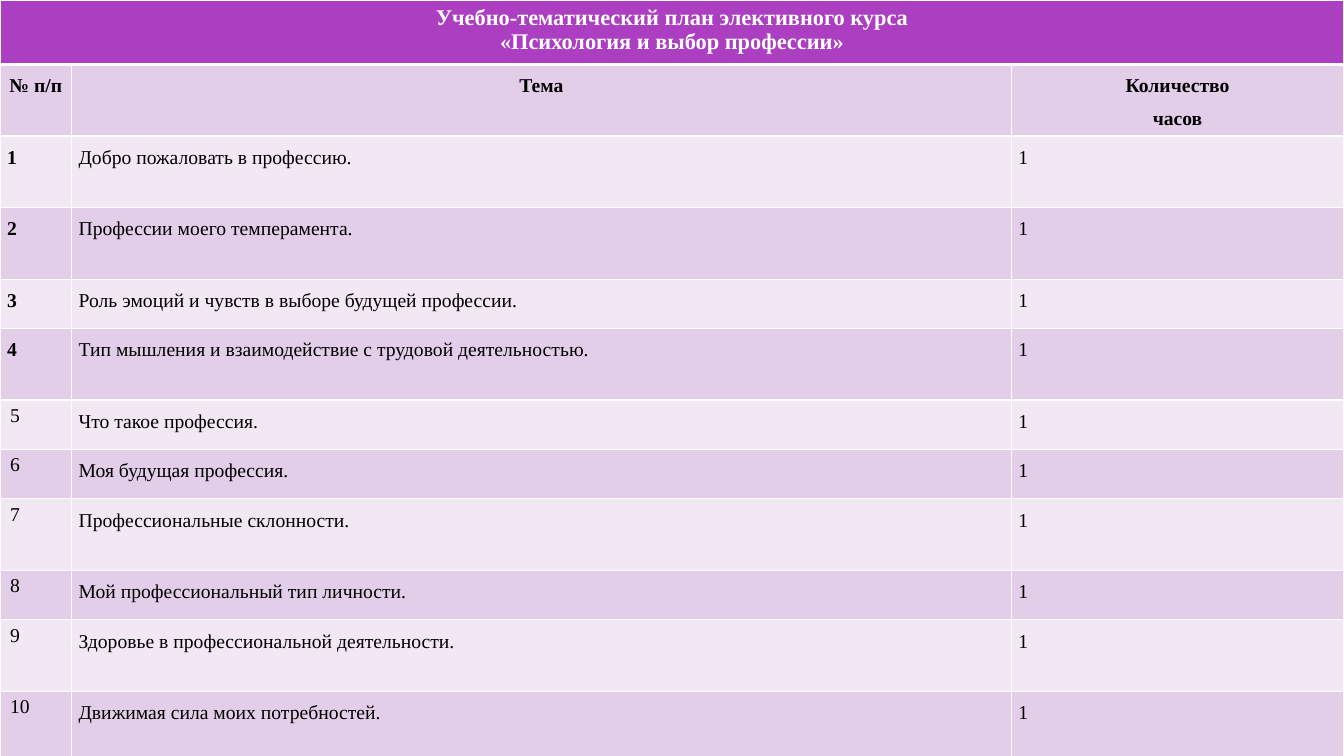
import pptx
import pptx.util
import pptx.dml.color
import pptx.enum.text
import pptx.oxml.ns
import lxml.etree

Inches, Pt = pptx.util.Inches, pptx.util.Pt
RGB = pptx.dml.color.RGBColor.from_string
ALIGN = pptx.enum.text.PP_ALIGN

COLORS = {"title": "AC3EC1", "dark": "E3CEE9", "light": "F1E8F4",
          "white": "FFFFFF", "black": "000000"}
TALL, SHORT = 0.71, 0.49

# Topics with their row heights; each takes one hour
topics = [
    ("Добро пожаловать в профессию.", TALL),
    ("Профессии моего темперамента.", TALL),
    ("Роль эмоций и чувств в выборе будущей профессии.", SHORT),
    ("Тип мышления и взаимодействие с трудовой деятельностью.", TALL),
    ("Что такое профессия.", SHORT),
    ("Моя будущая профессия.", SHORT),
    ("Профессиональные склонности.", TALL),
    ("Мой профессиональный тип личности.", SHORT),
    ("Здоровье в профессиональной деятельности.", TALL),
    ("Движимая сила моих потребностей.", TALL),
]
rows = [["Учебно-тематический план элективного курса\n«Психология и выбор профессии»", "", ""],
        ["№ п/п", "Тема", "Количество\nчасов"]]
rows += [[str(n), topic, "1"] for n, (topic, height) in enumerate(topics, 1)]
heights = [0.64, TALL] + [height for topic, height in topics]
widths = [0.71, 9.32, 3.3]


def add_borders(cell, **points):
    """Draw white cell borders of the given widths in points."""
    tcPr = cell._tc.get_or_add_tcPr()
    for side, width in points.items():
        ln = lxml.etree.SubElement(tcPr, pptx.oxml.ns.qn("a:ln" + side), w=str(Pt(width)))
        fill = lxml.etree.SubElement(ln, pptx.oxml.ns.qn("a:solidFill"))
        lxml.etree.SubElement(fill, pptx.oxml.ns.qn("a:srgbClr"), val=COLORS["white"])


# Slide
prs = pptx.Presentation()
prs.slide_width, prs.slide_height = Inches(13.33), Inches(7.5)
s = prs.slides.add_slide(prs.slide_layouts[6])
s.background.fill.solid()
s.background.fill.fore_color.rgb = RGB(COLORS["black"])

# Table grid
table = s.shapes.add_table(len(rows), len(widths), 0, 0,
                           Inches(sum(widths)), Inches(sum(heights))).table
for column, width in zip(table.columns, widths):
    column.width = Inches(width)
for row, height in zip(table.rows, heights):
    row.height = Inches(height)
table.cell(0, 0).merge(table.cell(0, 2))

# Cells
for i, texts in enumerate(rows):
    is_title, is_heading = i == 0, i == 1
    for j, text in enumerate(texts):
        cell = table.cell(i, j)
        add_borders(cell, L=1, R=1, T=3 if is_heading else 1, B=3 if is_title else 1)
        cell.fill.solid()
        cell.fill.fore_color.rgb = RGB(
            COLORS["title" if is_title else "dark" if i % 2 else "light"])

        # Numbers from 5 on keep the default margins and line spacing
        is_plain = is_title or (j == 0 and i > 5)
        if not is_plain:
            cell.margin_left = cell.margin_right = Inches(0.07)
            cell.margin_top = cell.margin_bottom = 0
        if not text:
            continue
        cell.text = text
        for p in cell.text_frame.paragraphs:
            if is_title or is_heading:
                p.alignment = ALIGN.CENTER
            elif not is_plain:
                p.alignment = ALIGN.JUSTIFY
            if not is_plain:
                p.line_spacing = 1.5
            p.font.name = "Times New Roman"
            p.font.size = Pt(16 if is_title else 14)
            p.font.bold = is_title or is_heading or (j == 0 and i <= 5)
            p.font.color.rgb = RGB(COLORS["white" if is_title else "black"])

prs.save("out.pptx")
